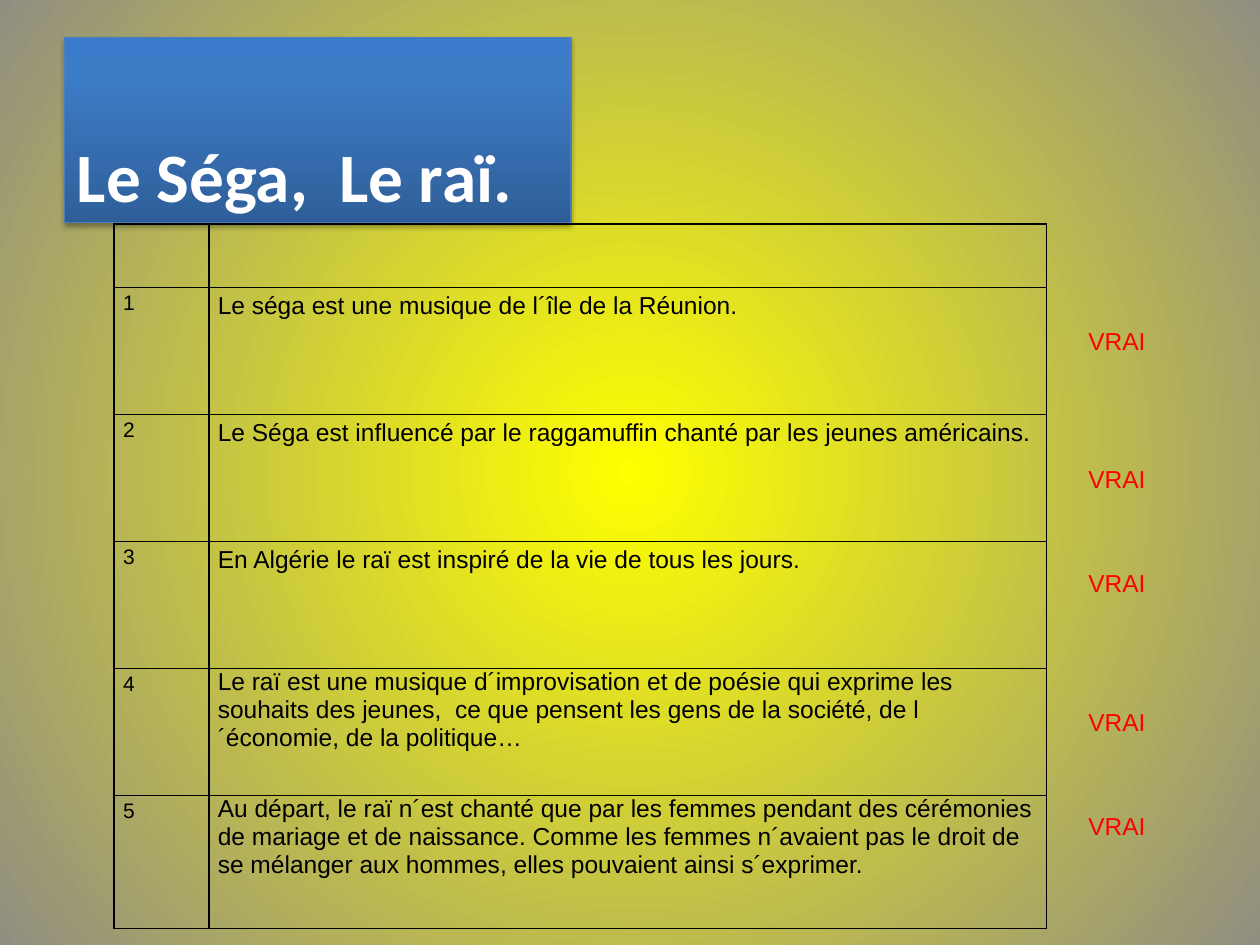
from lxml import etree
from pptx import Presentation
from pptx.dml.color import RGBColor
from pptx.enum.shapes import MSO_SHAPE
from pptx.enum.text import MSO_ANCHOR, PP_ALIGN
from pptx.oxml import parse_xml
from pptx.oxml.ns import nsdecls, qn
from pptx.util import Cm, Pt

RECTANGLE = MSO_SHAPE.RECTANGLE
TOP, BOTTOM = MSO_ANCHOR.TOP, MSO_ANCHOR.BOTTOM
LEFT = PP_ALIGN.LEFT

COLORS = {
    "yellow": "FFFF00", "grey": "918E81",
    "deep_blue": "2F5F99", "mid_blue": "3D7CC7", "light_blue": "3A7CCB",
    "outline": "4B7EBC", "white": "FFFFFF", "black": "000000", "red": "FF0000",
}

STATEMENTS = [
    ("Le séga est une musique de l´île de la Réunion.", 1.15),
    ("Le Séga est influencé par le raggamuffin chanté par les jeunes américains.", 1.15),
    ("En Algérie le raï est inspiré de la vie de tous les jours.", 1.15),
    ("Le raï est une musique d´improvisation et de poésie qui exprime les souhaits "
     "des jeunes,  ce que pensent les gens de la société, de l´économie, "
     "de la politique…", None),
    ("Au départ, le raï n´est chanté que par les femmes pendant des cérémonies de "
     "mariage et de naissance. Comme les femmes n´avaient pas le droit de se mélanger "
     "aux hommes, elles pouvaient ainsi s´exprimer.", None),
]
# Points of space above each answer
ANSWERS = [("VRAI", space) for space in (0, 62.2, 42.8, 62.2, 42.8)]


def write_text(paragraph, text, size=14, font="Arial", color="black", bold=False,
               line_spacing=None, space_before=0):
    paragraph.alignment = LEFT
    paragraph.space_before = Pt(space_before)
    if line_spacing:
        paragraph.line_spacing = line_spacing
    run = paragraph.add_run()
    run.text = text
    run.font.size, run.font.name, run.font.bold = Pt(size), font, bold
    run.font.color.rgb = RGBColor.from_string(COLORS[color])


def set_gradient(element, stops, direction):
    """Replace the gradient inside element by the given stops and direction."""
    gradient = element.find(".//" + qn("a:gradFill"))
    stop_xml = "".join(
        f'<a:gs pos="{position * 1000}"><a:srgbClr val="{COLORS[color]}"/></a:gs>'
        for position, color in stops)
    new_gradient = parse_xml(
        f'<a:gradFill {nsdecls("a")} rotWithShape="1">'
        f"<a:gsLst>{stop_xml}</a:gsLst>{direction}</a:gradFill>")
    gradient.getparent().replace(gradient, new_gradient)


class SlideBuilder:
    def __init__(self, slide):
        self.slide = slide

    def background(self, stops):
        self.slide.background.fill.gradient()
        set_gradient(self.slide.element, stops,
                     '<a:path path="circle"><a:fillToRect l="50000" t="50000" '
                     'r="50000" b="50000"/></a:path>')

    def title(self, text, left, top, width, height):
        shape = self.slide.shapes.add_shape(RECTANGLE, left, top, width, height)
        shape.fill.gradient()
        set_gradient(shape.element,
                     [(0, "deep_blue"), (80, "mid_blue"), (100, "light_blue")],
                     '<a:lin ang="16200000" scaled="0"/>')
        shape.line.color.rgb = RGBColor.from_string(COLORS["outline"])
        shape.line.width = Pt(0.75)
        # Soft shadow below the box
        shape.shadow.inherit = False
        shape.element.spPr.find(qn("a:effectLst")).append(parse_xml(
            f'<a:outerShdw {nsdecls("a")} blurRad="{Pt(3.1)}" dist="{Pt(1.8)}" '
            f'dir="5400000" rotWithShape="0"><a:srgbClr val="{COLORS["black"]}">'
            '<a:alpha val="35000"/></a:srgbClr></a:outerShdw>'))
        frame = shape.text_frame
        frame.word_wrap = True
        frame.vertical_anchor = BOTTOM
        write_text(frame.paragraphs[0], text, size=39.6, font="Calibri",
                   color="white", bold=True)

    def answers(self, entries, left, top, width, height, inset):
        frame = self.slide.shapes.add_textbox(left, top, width, height).text_frame
        frame.word_wrap = True
        frame.vertical_anchor = TOP
        frame.margin_top = inset
        for index, (text, space) in enumerate(entries):
            paragraph = frame.add_paragraph() if index else frame.paragraphs[0]
            write_text(paragraph, text, color="red", space_before=space)

    def table(self, statements, left, top, columns, rows):
        table = self.slide.shapes.add_table(
            len(rows), len(columns), left, top, sum(columns), sum(rows)).table
        table.first_row = table.horz_banding = False
        for column, width in zip(table.columns, columns):
            column.width = width
        for row, height in zip(table.rows, rows):
            row.height = height
        for cell in table.iter_cells():
            cell.fill.background()
            self.cell_borders(cell)
        for number, (text, spacing) in enumerate(statements, 1):
            self.cell_text(table.cell(number, 0), str(number), size=12, line_spacing=1.15)
            self.cell_text(table.cell(number, 1), text, line_spacing=spacing)

    def cell_text(self, cell, text, **text_format):
        cell.margin_left = cell.margin_right = Cm(0.18)
        cell.margin_top = cell.margin_bottom = 0
        write_text(cell.text_frame.paragraphs[0], text, **text_format)

    def cell_borders(self, cell):
        properties = cell._tc.get_or_add_tcPr()
        for index, side in enumerate(("lnL", "lnR", "lnT", "lnB")):
            border = etree.Element(qn(f"a:{side}"), w=str(Pt(1)))
            fill = etree.SubElement(border, qn("a:solidFill"))
            etree.SubElement(fill, qn("a:srgbClr"), val=COLORS["black"])
            properties.insert(index, border)


def main():
    presentation = Presentation()
    presentation.slide_width, presentation.slide_height = Cm(25.4), Cm(19.05)
    builder = SlideBuilder(presentation.slides.add_slide(presentation.slide_layouts[6]))

    # Background and title
    builder.background([(0, "yellow"), (100, "grey")])
    builder.title("Le Séga,  Le raï.", Cm(1.3), Cm(0.76), Cm(10.21), Cm(3.73))

    # Answers beside the table
    builder.answers(ANSWERS, Cm(21.69), Cm(4.32), Cm(3.99), Cm(14.2), inset=Cm(2.25))

    # Numbered statements under an empty header row
    builder.table(STATEMENTS, Cm(2.3), Cm(4.52), columns=[Cm(1.91), Cm(16.89)],
                  rows=[Cm(1.28)] + [Cm(2.56)] * 4 + [Cm(2.68)])

    presentation.save("out.pptx")


if __name__ == "__main__":
    main()
